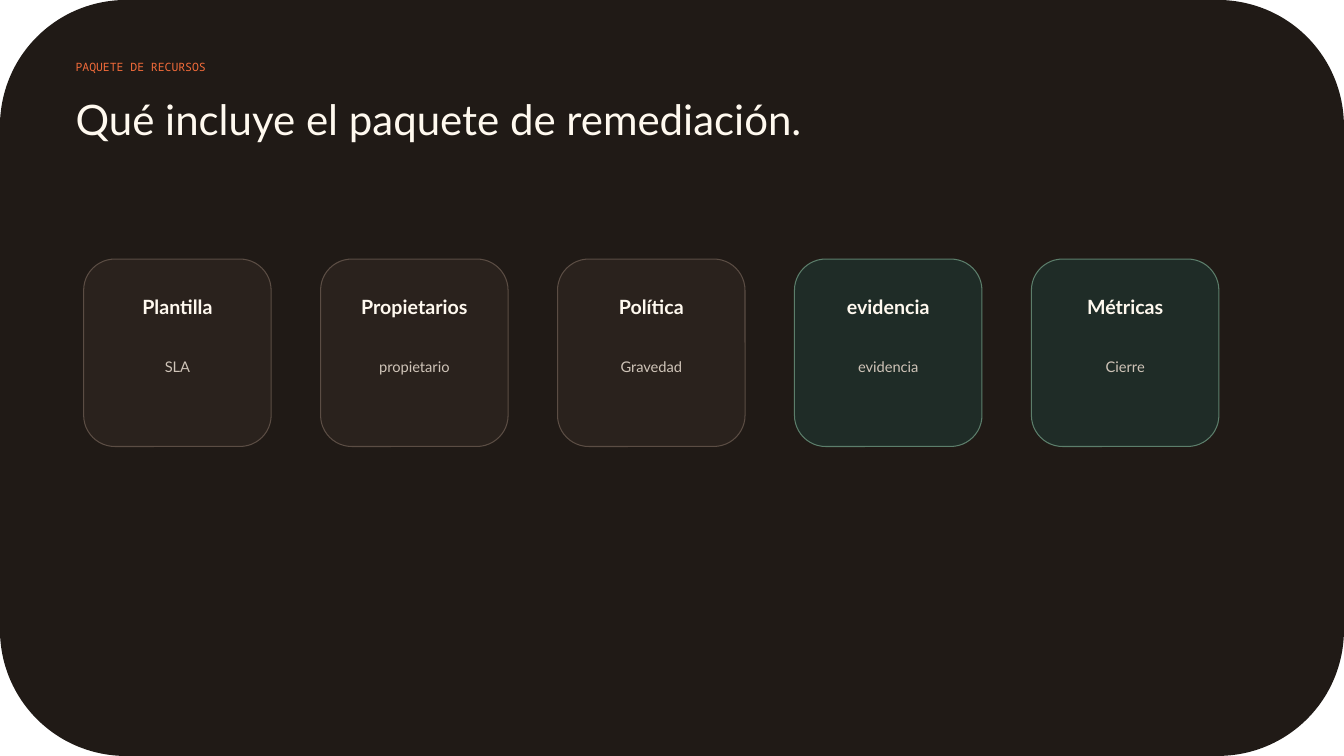
from dataclasses import dataclass

from pptx import Presentation
from pptx.dml.color import RGBColor
from pptx.enum.shapes import MSO_SHAPE
from pptx.enum.text import PP_ALIGN
from pptx.shapes.autoshape import Shape
from pptx.slide import Slide
from pptx.util import Inches, Pt

ROUNDED = MSO_SHAPE.ROUNDED_RECTANGLE
LEFT, CENTER = PP_ALIGN.LEFT, PP_ALIGN.CENTER

INK = RGBColor(0x20, 0x1A, 0x16)
CREAM = RGBColor(0xFF, 0xF9, 0xEF)
SAND = RGBColor(0xCF, 0xC4, 0xB8)
ORANGE = RGBColor(0xF2, 0x6B, 0x3A)
BROWN = RGBColor(0x2A, 0x22, 0x1D)
BROWN_EDGE = RGBColor(0x5B, 0x4D, 0x44)
GREEN = RGBColor(0x1F, 0x2C, 0x27)
GREEN_EDGE = RGBColor(0x5C, 0x7E, 0x6B)

SLIDE_W, SLIDE_H = 13.33, 7.5
MARGIN = 0.75
GRID_LEFT, GRID_TOP = 0.83, 2.57
COLUMN_PITCH = 2.35
CARD_SIDE = 1.86


@dataclass(frozen=True)
class Box:
    left: float
    top: float
    width: float
    height: float

    def lengths(self) -> tuple[int, int, int, int]:
        return (Inches(self.left), Inches(self.top),
                Inches(self.width), Inches(self.height))


@dataclass(frozen=True)
class TextStyle:
    size: float
    color: RGBColor
    font: str = "Lato"
    bold: bool = False
    align: PP_ALIGN = LEFT


@dataclass(frozen=True)
class Card:
    title: str
    detail: str
    fill: RGBColor = BROWN
    edge: RGBColor = BROWN_EDGE


KICKER = TextStyle(8.2, ORANGE, font="Noto Sans Mono")
HEADING = TextStyle(30, CREAM)
CARD_TITLE = TextStyle(14, CREAM, bold=True, align=CENTER)
CARD_DETAIL = TextStyle(10.5, SAND, align=CENTER)

CARDS = [
    Card("Plantilla", "SLA"),
    Card("Propietarios", "propietario"),
    Card("Política", "Gravedad"),
    Card("evidencia", "evidencia", GREEN, GREEN_EDGE),
    Card("Métricas", "Cierre", GREEN, GREEN_EDGE),
]


def add_panel(s: Slide, box: Box, fill: RGBColor) -> Shape:
    sp = s.shapes.add_shape(ROUNDED, *box.lengths())
    sp.shadow.inherit = False
    sp.fill.solid()
    sp.fill.fore_color.rgb = fill
    sp.line.fill.background()
    return sp


def add_text(s: Slide, box: Box, text: str, style: TextStyle) -> None:
    tf = s.shapes.add_textbox(*box.lengths()).text_frame
    tf.word_wrap = True
    tf.margin_left = tf.margin_top = tf.margin_right = tf.margin_bottom = 0
    p = tf.paragraphs[0]
    p.text = text
    p.alignment = style.align
    p.font.name = style.font
    p.font.size = Pt(style.size)
    p.font.bold = style.bold
    p.font.color.rgb = style.color


def add_card(s: Slide, column: int, card: Card) -> None:
    left = GRID_LEFT + column * COLUMN_PITCH
    sp = add_panel(s, Box(left, GRID_TOP, CARD_SIDE, CARD_SIDE), card.fill)
    sp.line.color.rgb = card.edge
    sp.line.width = Pt(0.75)
    rows = [
        (card.title, CARD_TITLE, 0.36, 1.49, 0.33),
        (card.detail, CARD_DETAIL, 0.98, 1.55, 0.57),
    ]
    for text, style, drop, width, height in rows:
        inset = (CARD_SIDE - width) / 2
        add_text(s, Box(left + inset, GRID_TOP + drop, width, height), text, style)


def main() -> None:
    prs = Presentation()
    prs.slide_width, prs.slide_height = Inches(SLIDE_W), Inches(SLIDE_H)
    s = prs.slides.add_slide(prs.slide_layouts[6])
    add_panel(s, Box(0, 0, SLIDE_W, SLIDE_H), INK)
    add_text(s, Box(MARGIN, 0.6, 4.59, 0.28), "PAQUETE DE RECURSOS", KICKER)
    add_text(s, Box(MARGIN, 0.93, 8.31, 0.71),
             "Qué incluye el paquete de remediación.", HEADING)
    for column, card in enumerate(CARDS):
        add_card(s, column, card)
    prs.save("out.pptx")


if __name__ == "__main__":
    main()
